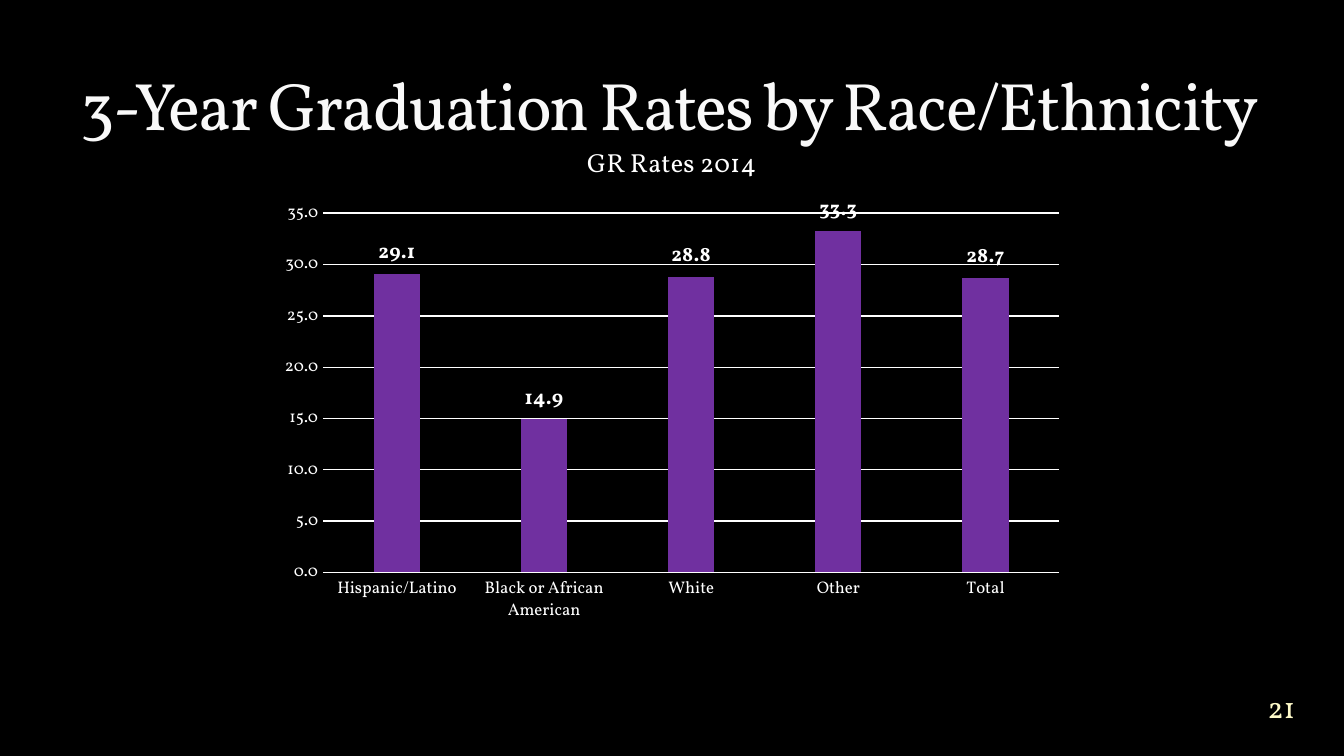
from pptx import Presentation
from pptx.chart.data import CategoryChartData
from pptx.dml.color import RGBColor
from pptx.enum.chart import XL_CHART_TYPE as CT, XL_LABEL_POSITION as LP, XL_TICK_MARK as TM
from pptx.enum.text import MSO_ANCHOR as ANCHOR, PP_ALIGN as ALIGN
from pptx.util import Inches, Pt

BLACK = RGBColor(0x00, 0x00, 0x00)
WHITE = RGBColor(0xFF, 0xFF, 0xFF)
OFF_WHITE = RGBColor(0xF9, 0xF9, 0xF9)
CREAM = RGBColor(0xFE, 0xFA, 0xC9)
PURPLE = RGBColor(0x70, 0x30, 0xA0)
FONT = "Vollkorn"
WIDTH = Inches(10)
HEIGHT = WIDTH * 9 // 16
COLUMN, ROW = WIDTH / 100, HEIGHT / 100

RATES = {
    "Hispanic/Latino": 29.1,
    "Black or African American": 14.9,
    "White": 28.8,
    "Other": 33.3,
    "Total": 28.7,
}


def style(font, size, color=WHITE, bold=False):
    font.name = FONT
    font.size = Pt(size)
    font.bold = bold
    font.color.rgb = color


def rule(line):
    line.color.rgb = WHITE
    line.width = Pt(0.75)


def add_title(slide, box, text):
    sp = slide.shapes.title
    sp.left, sp.top, sp.width, sp.height = box
    tf = sp.text_frame
    tf.text = text
    tf.word_wrap = True
    tf.vertical_anchor = ANCHOR.BOTTOM
    p = tf.paragraphs[0]
    p.alignment = ALIGN.LEFT
    r = p.runs[0]
    style(r.font, 36, OFF_WHITE)
    r.font._element.set("spc", "-100")


def add_page_number(slide, box, number):
    tf = slide.shapes.add_textbox(*box).text_frame
    tf.margin_left = tf.margin_right = tf.margin_top = tf.margin_bottom = 0
    tf.word_wrap = True
    tf.vertical_anchor = ANCHOR.MIDDLE
    tf.text = str(number)
    p = tf.paragraphs[0]
    p.alignment = ALIGN.CENTER
    style(p.runs[0].font, 16, CREAM)


def add_rate_chart(slide, box, name, rates):
    data = CategoryChartData(number_format="0.0")
    data.categories = list(rates)
    data.add_series(name, list(rates.values()))
    chart = slide.shapes.add_chart(CT.COLUMN_CLUSTERED, *box, data).chart
    style(chart.font, 10)
    chart.has_legend = False
    chart.has_title = True
    tf = chart.chart_title.text_frame
    tf.text = name
    style(tf.paragraphs[0].runs[0].font, 14)
    chart.chart_title.include_in_layout = False

    for axis in (chart.category_axis, chart.value_axis):
        axis.major_tick_mark = axis.minor_tick_mark = TM.NONE
        style(axis.tick_labels.font, 9)
    rule(chart.category_axis.format.line)
    values = chart.value_axis
    values.minimum_scale, values.maximum_scale, values.major_unit = 0, 35, 5
    values.format.line.fill.background()
    rule(values.major_gridlines.format.line)
    values.tick_labels.number_format = "0.0"
    values.tick_labels.number_format_is_linked = False

    plot = chart.plots[0]
    plot.gap_width, plot.overlap = 219, -27
    plot.vary_by_categories = False
    series = plot.series[0]
    series.format.fill.solid()
    series.format.fill.fore_color.rgb = PURPLE
    labels = series.data_labels
    labels.show_value = True
    labels.position = LP.OUTSIDE_END
    labels.number_format = "0.0"
    labels.number_format_is_linked = False
    style(labels.font, 11, bold=True)


def cells(column, row, columns, rows):
    return int(COLUMN * column), int(ROW * row), int(COLUMN * columns), int(ROW * rows)


def main():
    prs = Presentation()
    prs.slide_width, prs.slide_height = WIDTH, HEIGHT
    slide = prs.slides.add_slide(prs.slide_layouts[5])
    fill = slide.background.fill
    fill.solid()
    fill.fore_color.rgb = BLACK
    add_page_number(slide, cells(92, 90.13, 6.7, 6.76), 21)
    add_title(slide, cells(5, 2.2, 90, 17.78), "3-Year Graduation Rates by Race/Ethnicity")
    add_rate_chart(slide, cells(20, 16.2, 60, 67.5), "GR Rates 2014", RATES)
    prs.save("out.pptx")


if __name__ == "__main__":
    main()
